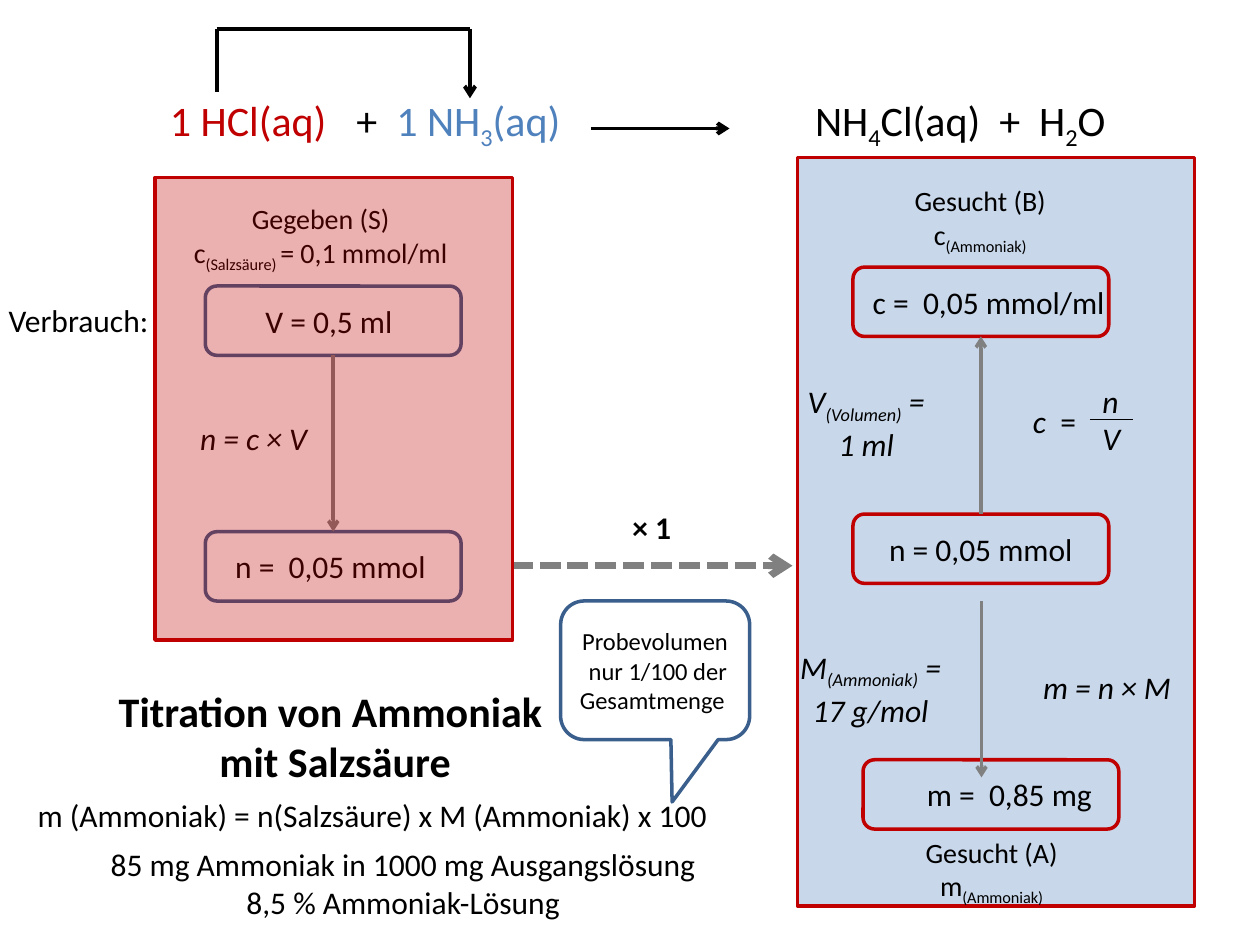
"""Builds the slide on the titration of ammonia with hydrochloric acid."""
from pptx import Presentation, util as u
from pptx.dml.color import RGBColor
from pptx.enum import dml, shapes, text
from pptx.oxml.ns import qn
from lxml import etree

BLACK = RGBColor(0x00, 0x00, 0x00)
RED = RGBColor(0xC0, 0x00, 0x00)
BLUE = RGBColor(0x4F, 0x81, 0xBD)
NAVY = RGBColor(0x3A, 0x5F, 0x8C)
GRAY = RGBColor(0x80, 0x80, 0x80)
FONT = "Calibri"
BOX_W, BOX_H = 2.03, 0.55
C, L = text.PP_ALIGN.CENTER, text.PP_ALIGN.LEFT
TOP, MIDDLE = text.MSO_ANCHOR.TOP, text.MSO_ANCHOR.MIDDLE

TITLE = ["Titration von Ammoniak ", "mit Salzsäure"]
EQUATION = [[("1 HCl(aq)", {"color": RED}), ("\t+  ", {}),
             ("1 NH~3~(aq)", {"color": BLUE}), ("\tNH~4~Cl(aq)  +  H~2~O", {})]]
EQUATION_TABS = [1.48, 5.12]
BOXES = {
    "volume": ("V = 0,5 ml", 1.63, 2.27, 0.45, NAVY),
    "amount acid": ("n =  0,05 mmol", 1.63, 4.22, 0.21, NAVY),
    "amount ammonia": ("n = 0,05 mmol", 6.77, 4.08, 0.26, RED),
    "concentration": ("c =  0,05 mmol/ml", 6.77, 2.12, 0.13, RED),
    "mass": ("m =  0,85 mg", 6.85, 6.03, 0.48, RED),
}
LABELS = [
    (["Gegeben (S)", "c~(Salzsäure) ~= 0,1 mmol/ml"], (1.38, 1.55, 2.33, 0.64), {"size": 16, "align": C}),
    (["Gesucht (B)", "c~(Ammoniak)~"], (7.15, 1.41, 1.26, 0.64), {"size": 16, "align": C}),
    (["Gesucht (A)", "m~(Ammoniak)~"], (7.24, 6.58, 1.26, 0.64), {"size": 16, "align": C}),
    (["Verbrauch:"], (-0.03, 2.34, 1.33, 0.4), {}),
    (["n = c × V"], (1.49, 3.28, 1.07, 0.4), {"italic": True}),
    (["V~(Volumen)~ =", "1 ml"], (6.26, 2.98, 1.23, 0.71), {"italic": True, "align": C}),
    ([[("c ", {"italic": True}), (" =", {})]], (8.1, 3.14, 0.67, 0.4), {}),
    (["n", "V"], (8.65, 2.98, 0.35, 0.71), {"italic": True}),
    (["× 1"], (4.92, 3.98, 0.51, 0.4), {"bold": True}),
    (["M~(Ammoniak)~ =", "17 g/mol"], (6.19, 5.09, 1.44, 0.71), {"italic": True, "align": C}),
    (["m = n × M"], (8.18, 5.25, 1.23, 0.4), {"italic": True}),
    (["m (Ammoniak) = n(Salzsäure) x M (Ammoniak) x 100"], (0.2, 6.27, 5.59, 0.4), {}),
    (["85 mg Ammoniak in 1000 mg Ausgangslösung", "8,5 % Ammoniak-Lösung"],
     (0.75, 6.66, 4.9, 0.71), {"align": C}),
]
CALLOUT = ["Probevolumen", " nur 1/100 der", "Gesamtmenge "]
LINES = [
    ((1.72, 0.73), (1.72, 0.23), BLACK, 2.25, False),
    ((1.72, 0.23), (3.73, 0.23), BLACK, 2.25, False),
    ((3.73, 0.23), (3.73, 0.78), BLACK, 2.25, True),
    ((4.69, 1.02), (5.79, 1.02), BLACK, 2.25, True),
    ((8.65, 3.33), (8.99, 3.33), BLACK, 0.75, False),
    ((7.79, 4.77), (7.79, 6.17), GRAY, 2, True),
]
JOINS = [("volume", 2, "amount acid", 0), ("amount ammonia", 0, "concentration", 2)]


def write(tf, lines, size=18, color=BLACK, bold=False, italic=False,
          align=L, anchor=TOP, wrap=False):
    """Fill a text frame; text between tildes is set as subscript."""
    tf.word_wrap, tf.vertical_anchor = wrap, anchor
    for i, line in enumerate(lines):
        p = tf.paragraphs[0] if i == 0 else tf.add_paragraph()
        p.alignment = align
        for content, own in [(line, {})] if isinstance(line, str) else line:
            for j, part in enumerate(content.split("~")):
                if not part:
                    continue
                r = p.add_run()
                r.text = part
                f = r.font
                f.name, f.size, f.bold = FONT, u.Pt(size), bold
                f.italic = own.get("italic", italic)
                f.color.rgb = own.get("color", color)
                if j % 2:
                    f._element.set("baseline", "-25000")


def label(slide, lines, at, **fmt):
    s = slide.shapes.add_textbox(*map(u.Inches, at))
    write(s.text_frame, lines, **fmt)
    return s


def outline(slide, kind, at, line, fill=None):
    sp = slide.shapes.add_shape(kind, *map(u.Inches, at))
    sp.shadow.inherit = False
    sp.line.color.rgb, sp.line.width = line, u.Pt(2)
    if fill is None:
        sp.fill.background()
    else:
        sp.fill.solid()
        sp.fill.fore_color.rgb = fill
        clr = sp.fill._xPr.find(qn("a:solidFill"))[0]
        etree.SubElement(clr, qn("a:alpha"), val="31000")
    return sp


def connect(slide, start, end, color, width, arrow):
    c = slide.shapes.add_connector(shapes.MSO_CONNECTOR.STRAIGHT,
                                   *map(u.Inches, (*start, *end)))
    c.line.color.rgb, c.line.width = color, u.Pt(width)
    if arrow:
        etree.SubElement(c.line._get_or_add_ln(), qn("a:tailEnd"), type="arrow")
    etree.SubElement(c._element.spPr, qn("a:effectLst"))
    return c


def main():
    prs = Presentation()
    prs.slide_width, prs.slide_height = u.Inches(10), u.Inches(7.5)
    slide = prs.slides.add_slide(prs.slide_layouts[5])
    kinds = shapes.MSO_SHAPE

    title = slide.shapes.title
    title.left, title.top, title.width, title.height = map(u.Inches, (0.55, 5.39, 4.22, 1.25))
    write(title.text_frame, TITLE, size=24, bold=True, align=C, wrap=True)

    outline(slide, kinds.RECTANGLE, (6.33, 1.25, 3.15, 5.94), RED, BLUE)
    boxes = {}
    for name, (content, x, y, indent, color) in BOXES.items():
        sp = boxes[name] = outline(slide, kinds.ROUNDED_RECTANGLE, (x, y, BOX_W, BOX_H), color)
        tf = sp.text_frame
        tf.margin_left, tf.margin_right = u.Inches(indent), 0
        write(tf, [content], anchor=MIDDLE, wrap=True)

    for lines, at, fmt in LABELS:
        label(slide, lines, at, **fmt)
    equation = label(slide, EQUATION, (1.25, 0.7, 7.95, 0.5), size=24, wrap=True)
    tabs = etree.SubElement(equation.text_frame.paragraphs[0]._p.get_or_add_pPr(), qn("a:tabLst"))
    for pos in EQUATION_TABS:
        etree.SubElement(tabs, qn("a:tab"), pos=str(u.Inches(pos)), algn="l")

    for line in LINES:
        connect(slide, *line)
    for first, side, last, end_side in JOINS:
        c = connect(slide, (0, 0), (1, 1), GRAY, 2, True)
        c.begin_connect(boxes[first], side)
        c.end_connect(boxes[last], end_side)
    ratio = connect(slide, (4.06, 4.49), (6.29, 4.49), GRAY, 4, True)
    ratio.line.dash_style = dml.MSO_LINE.SQUARE_DOT

    outline(slide, kinds.RECTANGLE, (1.23, 1.41, 2.84, 3.67), RED, RED)
    callout = outline(slide, kinds.ROUNDED_RECTANGULAR_CALLOUT, (4.45, 4.77, 1.5, 1.1), NAVY)
    for i, value in enumerate((0.09, 0.95, 0.17)):
        callout.adjustments[i] = value
    write(callout.text_frame, CALLOUT, size=14, align=C, anchor=MIDDLE)
    prs.save("out.pptx")


if __name__ == "__main__":
    main()
